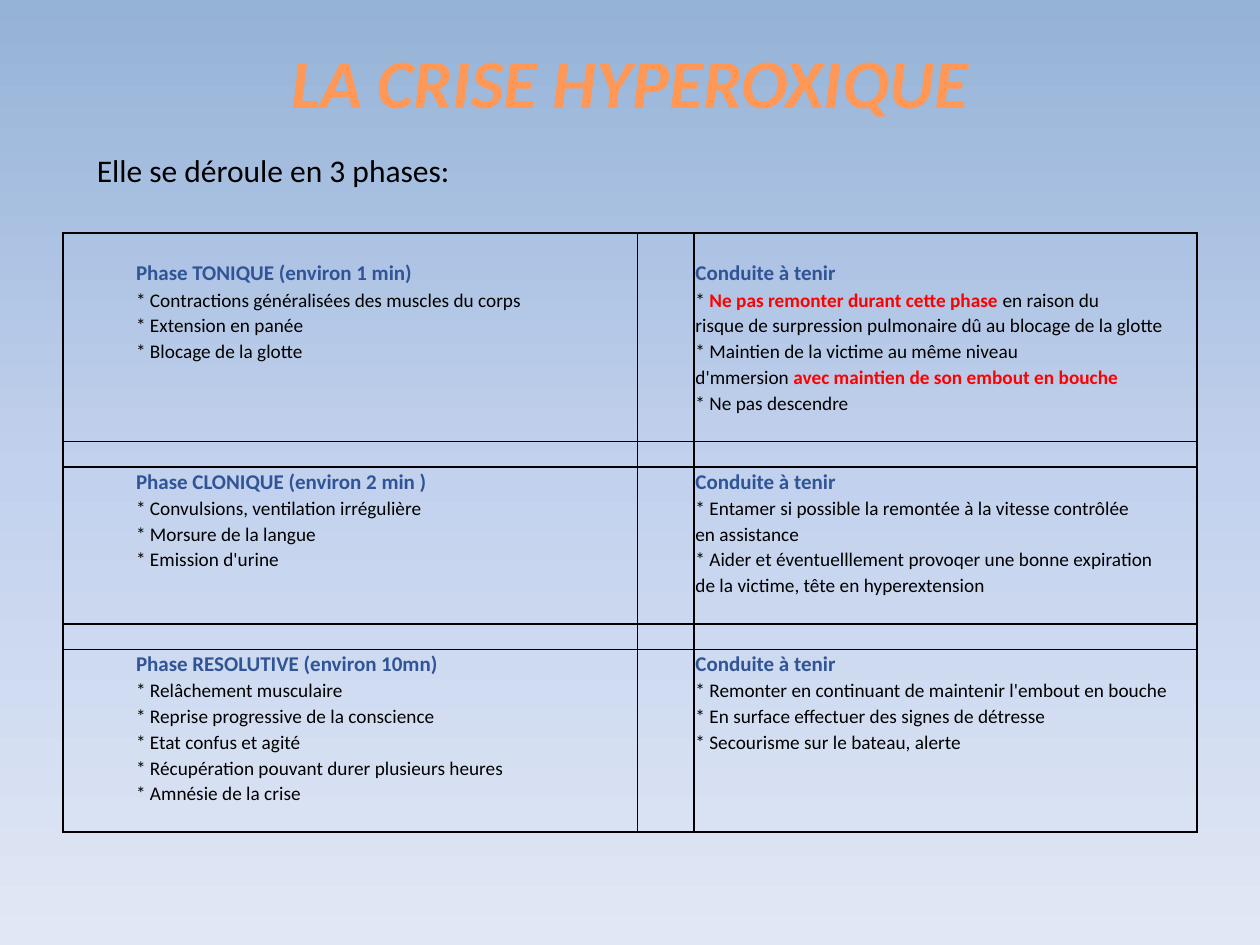
from copy import deepcopy
from dataclasses import dataclass
from itertools import zip_longest

from lxml import etree
from pptx import Presentation, util as u
from pptx.dml.color import RGBColor
from pptx.enum import text
from pptx.oxml.ns import qn

NO_GRID_STYLE = "{2D5ABB26-0587-4C30-8999-92F81FD0307C}"


@dataclass(frozen=True)
class Theme:
    font: str = "Calibri"
    title: str = "FF9856"
    heading: str = "305496"
    body: str = "000000"
    alert: str = "FF0000"
    line: str = "000000"
    background: tuple = ((0, "95B3D7"), (0.5, "C2D1ED"), (1, "E1E8F5"))
    title_size: float = 39.6
    intro_size: int = 18
    heading_size: int = 12
    body_size: int = 11
    line_width: int = 1


# Each phase pairs its signs with the conduct; the first line is the heading
# and text between bars is a warning.
PHASES = [
    (["Phase TONIQUE (environ 1 min)",
      "* Contractions généralisées des muscles du corps",
      "* Extension en panée",
      "* Blocage de la glotte"],
     ["Conduite à tenir",
      "* |Ne pas remonter durant cette phase |en raison du",
      "risque de surpression pulmonaire dû au blocage de la glotte",
      "* Maintien de la victime au même niveau",
      "d'mmersion |avec maintien de son embout en bouche|",
      "* Ne pas descendre"]),
    (["Phase CLONIQUE (environ 2 min )",
      "* Convulsions, ventilation irrégulière",
      "* Morsure de la langue",
      "* Emission d'urine"],
     ["Conduite à tenir",
      "* Entamer si possible la remontée à la vitesse contrôlée",
      "en assistance",
      "* Aider et éventuelllement provoqer une bonne expiration",
      "de la victime, tête en hyperextension"]),
    (["Phase RESOLUTIVE (environ 10mn)",
      "* Relâchement musculaire",
      "* Reprise progressive de la conscience",
      "* Etat confus et agité",
      "* Récupération pouvant durer plusieurs heures",
      "* Amnésie de la crise"],
     ["Conduite à tenir",
      "* Remonter en continuant de maintenir l'embout en bouche",
      "* En surface effectuer des signes de détresse",
      "* Secourisme sur le bateau, alerte"]),
]


def set_all(target, values):
    for name, value in values.items():
        setattr(target, name, value)


def place(left, top, width, height):
    names = ("left", "top", "width", "height")
    return dict(zip(names, map(u.Inches, (left, top, width, height))))


class SlideBuilder:
    def __init__(self, deck, theme):
        self.theme = theme
        self.slide = deck.slides.add_slide(deck.slide_layouts[5])

    def background(self):
        fill = self.slide.background.fill
        fill.gradient()
        fill.gradient_angle = 270
        stop_list = self.slide.element.xpath(".//a:gsLst")[0]
        stop_list.append(deepcopy(stop_list[-1]))
        for stop, (position, color) in zip(fill.gradient_stops, self.theme.background):
            stop.position = position
            stop.color.rgb = RGBColor.from_string(color)

    def span(self, para, words, size, color, **style):
        span = para.add_run()
        span.text = words
        set_all(span.font, {"name": self.theme.font, "size": u.Pt(size), **style})
        span.font.color.rgb = RGBColor.from_string(color)

    def title(self, words, box):
        title = self.slide.shapes.title
        set_all(title, box)
        title.text_frame.vertical_anchor = text.MSO_ANCHOR.MIDDLE
        para = title.text_frame.paragraphs[0]
        para.alignment = text.PP_ALIGN.CENTER
        self.span(para, words, self.theme.title_size, self.theme.title,
                  bold=True, italic=True)

    def text_box(self, words, box):
        frame = self.slide.shapes.add_textbox(**box).text_frame
        frame.word_wrap = True
        self.span(frame.paragraphs[0], words, self.theme.intro_size, self.theme.body)

    def borders(self, cell, sides):
        properties = cell._tc.get_or_add_tcPr()
        for side in sides:
            line = etree.SubElement(properties, qn(f"a:ln{side}"),
                                    w=str(u.Pt(self.theme.line_width)))
            fill = etree.SubElement(line, qn("a:solidFill"))
            etree.SubElement(fill, qn("a:srgbClr"), val=self.theme.line)

    def cell(self, cell, words, is_heading, sides):
        theme = self.theme
        self.borders(cell, sides)
        cell.fill.background()
        inset = u.Inches(0.01)
        set_all(cell, {"margin_left": inset, "margin_right": inset,
                       "margin_top": inset, "margin_bottom": 0,
                       "vertical_anchor": text.MSO_ANCHOR.BOTTOM})
        para = cell.text_frame.paragraphs[0]
        if not words:
            # Keeps an empty row from growing to the default type size
            etree.SubElement(para._p, qn("a:endParaRPr"), sz=str(theme.body_size * 100))
        elif is_heading:
            self.span(para, words, theme.heading_size, theme.heading, bold=True)
        else:
            for index, part in enumerate(words.split("|")):
                alert = index % 2 == 1
                if part:
                    self.span(para, part, theme.body_size,
                              theme.alert if alert else theme.body, bold=alert)

    def phase_table(self, phases, box, widths, heading_height):
        """Draws each phase as a framed block with a blank row above and below."""
        blocks = [[("", ""), *zip_longest(*phase, fillvalue=""), ("", "")]
                  for phase in phases]
        row_count = sum(map(len, blocks))
        frame = self.slide.shapes.add_table(row_count, len(widths), **box)
        table = frame.table
        set_all(table, {"first_row": False, "horz_banding": False})
        table._tbl.tblPr.find(qn("a:tableStyleId")).text = NO_GRID_STYLE
        for column, width in zip(table.columns, widths):
            column.width = u.Inches(width)

        heading = u.Inches(heading_height)
        plain = (box["height"] - heading * len(blocks)) // (row_count - len(blocks))
        rows = iter(enumerate(table.rows))
        for block in blocks:
            for index, (signs, conduct) in enumerate(block):
                row_index, row = next(rows)
                row.height = heading if index == 1 else plain
                edge = {0: "T", len(block) - 1: "B"}.get(index, "")
                for column, words in enumerate(("", signs, "", conduct)):
                    side = "R" if column % 2 else "L"
                    self.cell(table.cell(row_index, column), words, index == 1, side + edge)


def main():
    deck = Presentation()
    set_all(deck, {"slide_width": u.Inches(10), "slide_height": u.Inches(7.5)})
    page = SlideBuilder(deck, Theme())
    page.background()
    page.title("LA CRISE HYPEROXIQUE", place(0.5, 0.3, 9, 0.69))
    page.phase_table(PHASES, place(0.5, 1.85, 9, 4.76),
                     widths=(0.57, 3.99, 0.45, 3.99), heading_height=0.22)
    page.text_box("Elle se déroule en 3 phases:", place(0.67, 1.15, 8.35, 0.4))
    deck.save("out.pptx")


if __name__ == "__main__":
    main()
